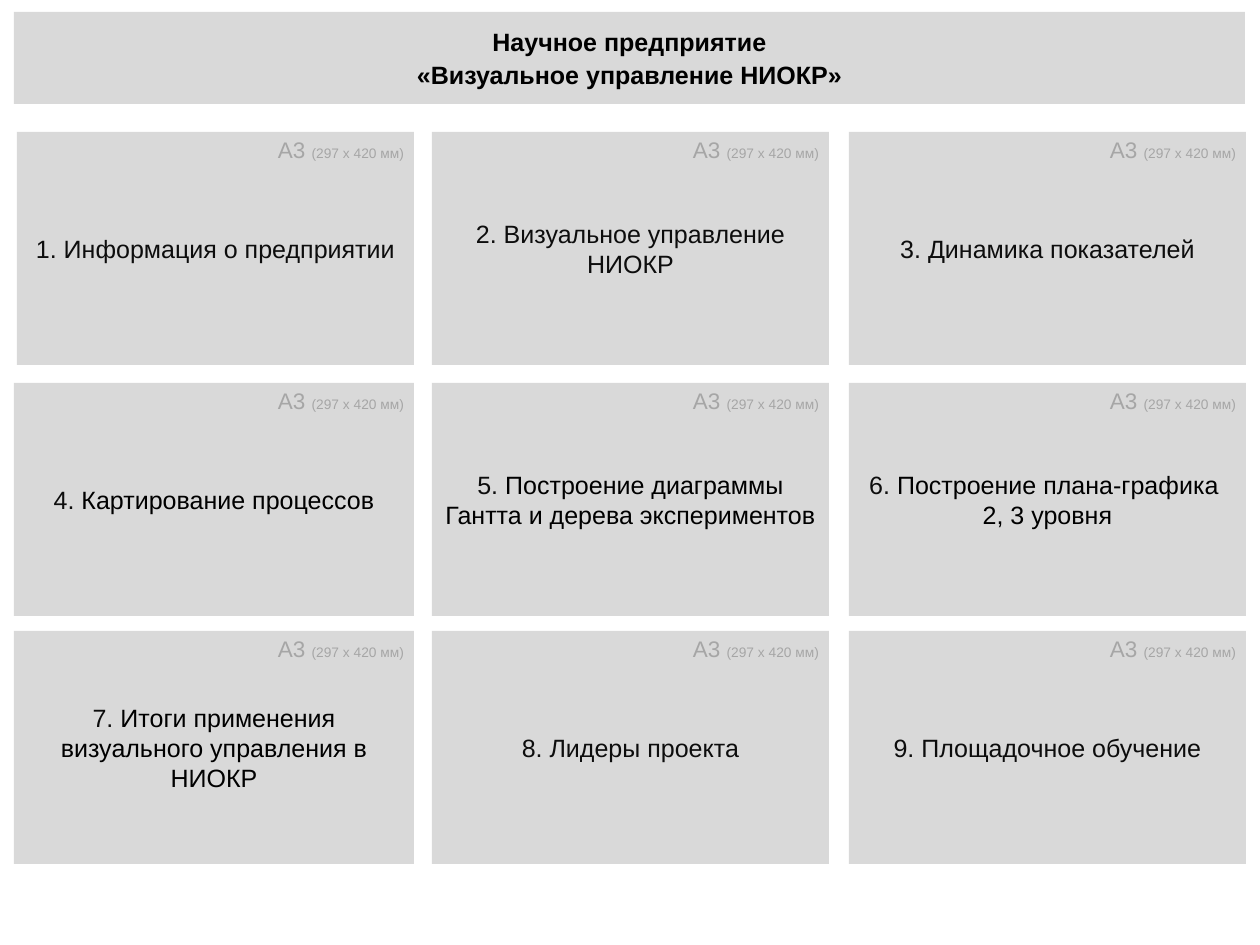
from dataclasses import dataclass

from pptx import Presentation, util as u
from pptx.dml.color import RGBColor
from pptx.enum import shapes, text as t


@dataclass(frozen=True)
class Theme:
    font: str = "Arial"
    panel: str = "D9D9D9"
    black: str = "000000"
    dark: str = "0D0D0D"
    muted: str = "A6A6A6"
    body: int = 20
    label: int = 18
    note: int = 11


theme = Theme()
PX = u.Inches(1) // 90

TITLE = ["Научное предприятие", "«Визуальное управление НИОКР»"]
CARDS = [
    (["Информация о предприятии"], theme.dark),
    (["Визуальное управление НИОКР"], theme.dark),
    (["Динамика показателей"], theme.dark),
    (["Картирование процессов"], theme.black),
    (["Построение диаграммы Гантта и дерева экспериментов"], theme.black),
    (["Построение плана-графика ", "2, 3 уровня"], theme.black),
    (["Итоги применения визуального управления в НИОКР"], theme.black),
    (["Лидеры проекта"], theme.dark),
    (["Площадочное обучение"], theme.dark),
]
FORMAT = [("А3 ", theme.label, theme.muted), ("(297 х 420 мм)", theme.note, theme.muted)]

RIGHTS = [414, 829, 1246]
TOPS = [132, 383, 631]
CARD_W, CARD_H = 397, 233
WIDE_CARD_W = 400
LABEL_W, LABEL_H = 145, 36


def write(sp, paragraphs, align=None, bold=False, spacing=None):
    tf = sp.text_frame
    for i, runs in enumerate(paragraphs):
        p = tf.add_paragraph() if i else tf.paragraphs[0]
        p.alignment = align
        if i and spacing:
            p.line_spacing = spacing
        for words, size, color in runs:
            r = p.add_run()
            r.text = words
            r.font.name = theme.font
            r.font.size = u.Pt(size)
            r.font.bold = bold
            r.font.color.rgb = RGBColor.from_string(color)


def add_panel(s, box, paragraphs, **fmt):
    sp = s.shapes.add_shape(shapes.MSO_SHAPE.RECTANGLE, *(v * PX for v in box))
    sp.shadow.inherit = False
    sp.fill.solid()
    sp.fill.fore_color.rgb = RGBColor.from_string(theme.panel)
    sp.line.fill.background()
    sp.text_frame.word_wrap = True
    sp.text_frame.vertical_anchor = t.MSO_ANCHOR.MIDDLE
    write(sp, paragraphs, align=t.PP_ALIGN.CENTER, **fmt)


def add_label(s, box):
    sp = s.shapes.add_textbox(*(v * PX for v in box))
    sp.text_frame.word_wrap = False
    sp.text_frame.auto_size = t.MSO_AUTO_SIZE.SHAPE_TO_FIT_TEXT
    write(sp, [FORMAT])


def main():
    prs = Presentation()
    prs.slide_width, prs.slide_height = 1260 * PX, 945 * PX
    s = prs.slides.add_slide(prs.slide_layouts[6])

    for i, (lines, color) in enumerate(CARDS):
        row, col = divmod(i, len(RIGHTS))
        right, top = RIGHTS[col], TOPS[row]
        width = WIDE_CARD_W if row and not col else CARD_W
        paragraphs = [[(line, theme.body, color)] for line in lines]
        paragraphs[0].insert(0, (f"{i + 1}. ", theme.body, theme.dark))
        add_panel(s, (right - width, top, width, CARD_H), paragraphs)
        add_label(s, (right - LABEL_W, top, LABEL_W, LABEL_H))

    add_panel(s, (14, 12, 1231, 92), [[(line, theme.body, theme.black)] for line in TITLE],
              bold=True, spacing=1.1)
    prs.save("out.pptx")


if __name__ == "__main__":
    main()
